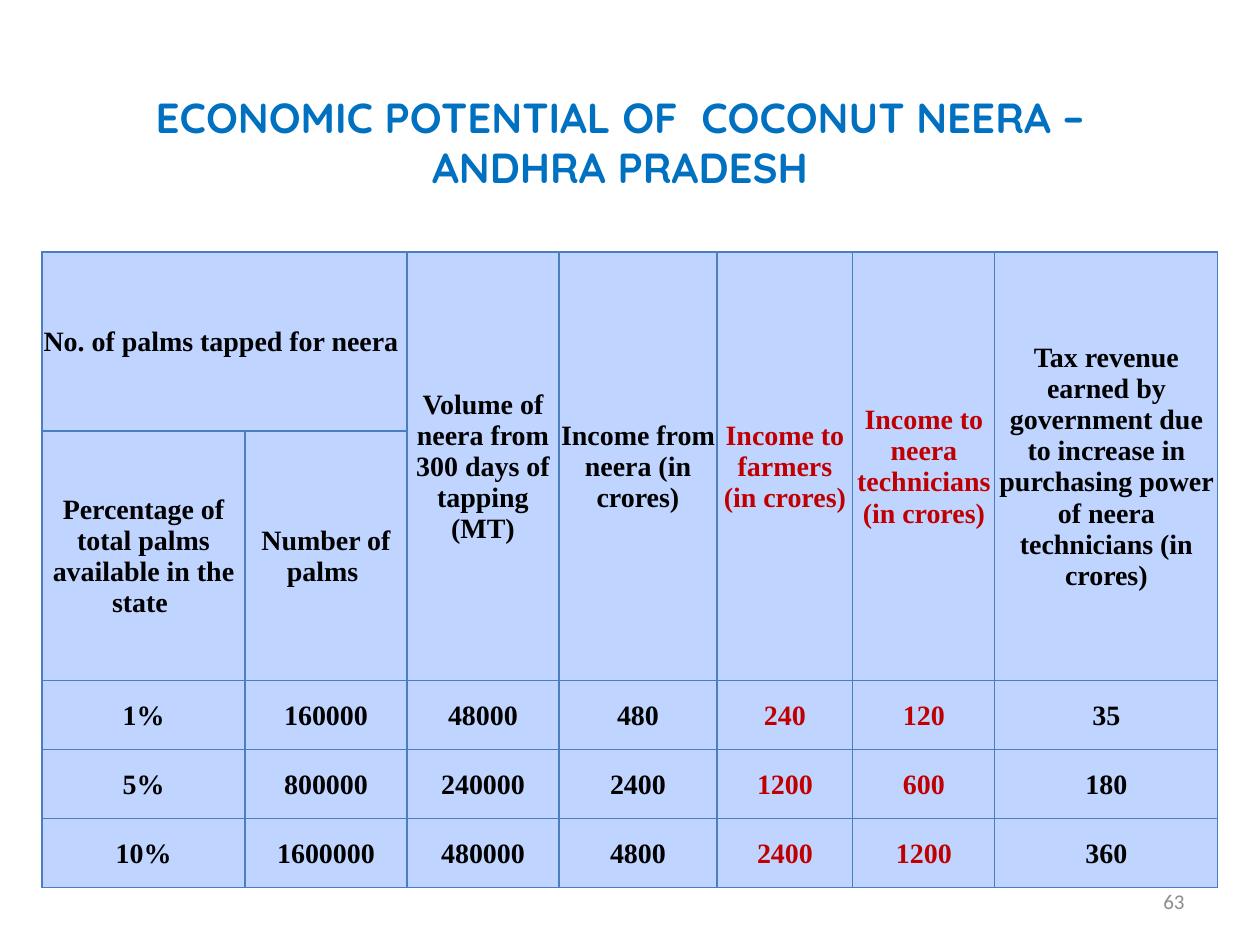
"""Build the slide on the economic potential of coconut neera."""
from dataclasses import dataclass
from typing import Any

from lxml import etree
from pptx import Presentation
from pptx.dml.color import RGBColor
from pptx.enum.text import MSO_ANCHOR, MSO_AUTO_SIZE, PP_ALIGN
from pptx.oxml.ns import qn
from pptx.util import Emu, Pt

CENTER, RIGHT = PP_ALIGN.CENTER, PP_ALIGN.RIGHT
MIDDLE = MSO_ANCHOR.MIDDLE
NO_FIT = MSO_AUTO_SIZE.NONE
TITLE_ONLY = 5
SCALE = 914400 / 126
SERIF = "Times New Roman"
COLORS = {"title": "0070C0", "page": "8C8C8C", "text": "000000",
          "income": "C00000", "fill": "BFD4FF", "line": "4B7EBC"}
WIDTHS = (203, 162, 152, 158, 136, 142, 223)
HEIGHTS = (179, 192, 69, 69, 69)
RED_COLS = (4, 5)
SIDES = ("a:lnL", "a:lnR", "a:lnT", "a:lnB")


@dataclass
class Box:
    left: int
    top: int
    width: int
    height: int


@dataclass
class Style:
    font: str
    size: int
    color: str
    bold: bool = False
    align: Any = CENTER


@dataclass
class Head:
    row: int
    col: int
    text: str
    rows: int = 1
    cols: int = 1


HEADS = (
    Head(0, 0, "No. of palms tapped for neera ", cols=2),
    Head(0, 2, "Volume of neera from 300 days of tapping (MT)", rows=2),
    Head(0, 3, "Income from neera (in crores)", rows=2),
    Head(0, 4, "Income to farmers (in crores)", rows=2),
    Head(0, 5, "Income to neera technicians (in crores)", rows=2),
    Head(0, 6, "Tax revenue earned by government due to increase in "
               "purchasing power of neera technicians (in crores)", rows=2),
    Head(1, 0, "Percentage of total palms available in the state "),
    Head(1, 1, "Number of palms "),
)
DATA = (
    ("1%", "160000", "48000", "480", "240", "120", "35"),
    ("5%", "800000", "240000", "2400", "1200", "600", "180"),
    ("10%", "1600000", "480000", "4800", "2400", "1200", "360"),
)


def px(value: int) -> Emu:
    """Turn px into EMU."""
    return Emu(round(value * SCALE))


def place(box: Box) -> tuple[Emu, ...]:
    """Give the box's four lengths in EMU."""
    return px(box.left), px(box.top), px(box.width), px(box.height)


def write(frame: Any, text: str, style: Style) -> None:
    """Put one styled paragraph in a text frame."""
    frame.text = text
    para = frame.paragraphs[0]
    para.alignment = style.align
    font = para.font
    font.name, font.size, font.bold = style.font, Pt(style.size), style.bold
    font.color.rgb = RGBColor.from_string(COLORS[style.color])


def label(shape: Any, box: Box, text: str, style: Style) -> None:
    """Move a text shape and fill it with middle-anchored text."""
    shape.left, shape.top, shape.width, shape.height = place(box)
    frame = shape.text_frame
    frame.word_wrap = True
    frame.auto_size = NO_FIT
    frame.vertical_anchor = MIDDLE
    write(frame, text, style)


def dress(cell: Any) -> None:
    """Set a cell's borders, fill, margins and anchor."""
    props = cell._tc.get_or_add_tcPr()
    for side in SIDES:
        line = etree.SubElement(props, qn(side), w=str(Pt(0.75)))
        solid = etree.SubElement(line, qn("a:solidFill"))
        etree.SubElement(solid, qn("a:srgbClr"), val=COLORS["line"])
    cell.fill.solid()
    cell.fill.fore_color.rgb = RGBColor.from_string(COLORS["fill"])
    cell.margin_left = cell.margin_right = cell.margin_top = px(1)
    cell.margin_bottom = 0
    cell.vertical_anchor = MIDDLE


def enter(grid: Any, row: int, col: int, text: str) -> None:
    """Write a table cell in its column's colour."""
    color = "income" if col in RED_COLS else "text"
    write(grid.cell(row, col).text_frame, text, Style(SERIF, 16, color, True))


def add_grid(slide: Any, box: Box) -> None:
    """Add the table of palms and income."""
    grid = slide.shapes.add_table(len(HEIGHTS), len(WIDTHS), *place(box)).table
    grid.first_row = grid.horz_banding = False
    for col, width in zip(grid.columns, WIDTHS):
        col.width = px(width)
    for row, height in zip(grid.rows, HEIGHTS):
        row.height = px(height)
    for cell in grid.iter_cells():
        dress(cell)
    for head in HEADS:
        if head.rows * head.cols > 1:
            last = grid.cell(head.row + head.rows - 1, head.col + head.cols - 1)
            grid.cell(head.row, head.col).merge(last)
        enter(grid, head.row, head.col, head.text)
    for row, items in enumerate(DATA, 2):
        for col, text in enumerate(items):
            enter(grid, row, col, text)


def main() -> None:
    """Build and save the deck."""
    deck = Presentation()
    deck.slide_width, deck.slide_height = px(1260), px(945)
    slide = deck.slides.add_slide(deck.slide_layouts[TITLE_ONLY])
    label(slide.shapes.title, Box(53, 63, 1134, 158),
          "ECONOMIC POTENTIAL OF  COCONUT NEERA – ANDHRA PRADESH",
          Style("Quicksand", 24, "title", True))
    page = Box(903, 876, 294, 50)
    label(slide.shapes.add_textbox(*place(page)), page, "63",
          Style("Calibri", 12, "page", align=RIGHT))
    add_grid(slide, Box(42, 252, sum(WIDTHS), sum(HEIGHTS)))
    deck.save("out.pptx")


if __name__ == "__main__":
    main()
